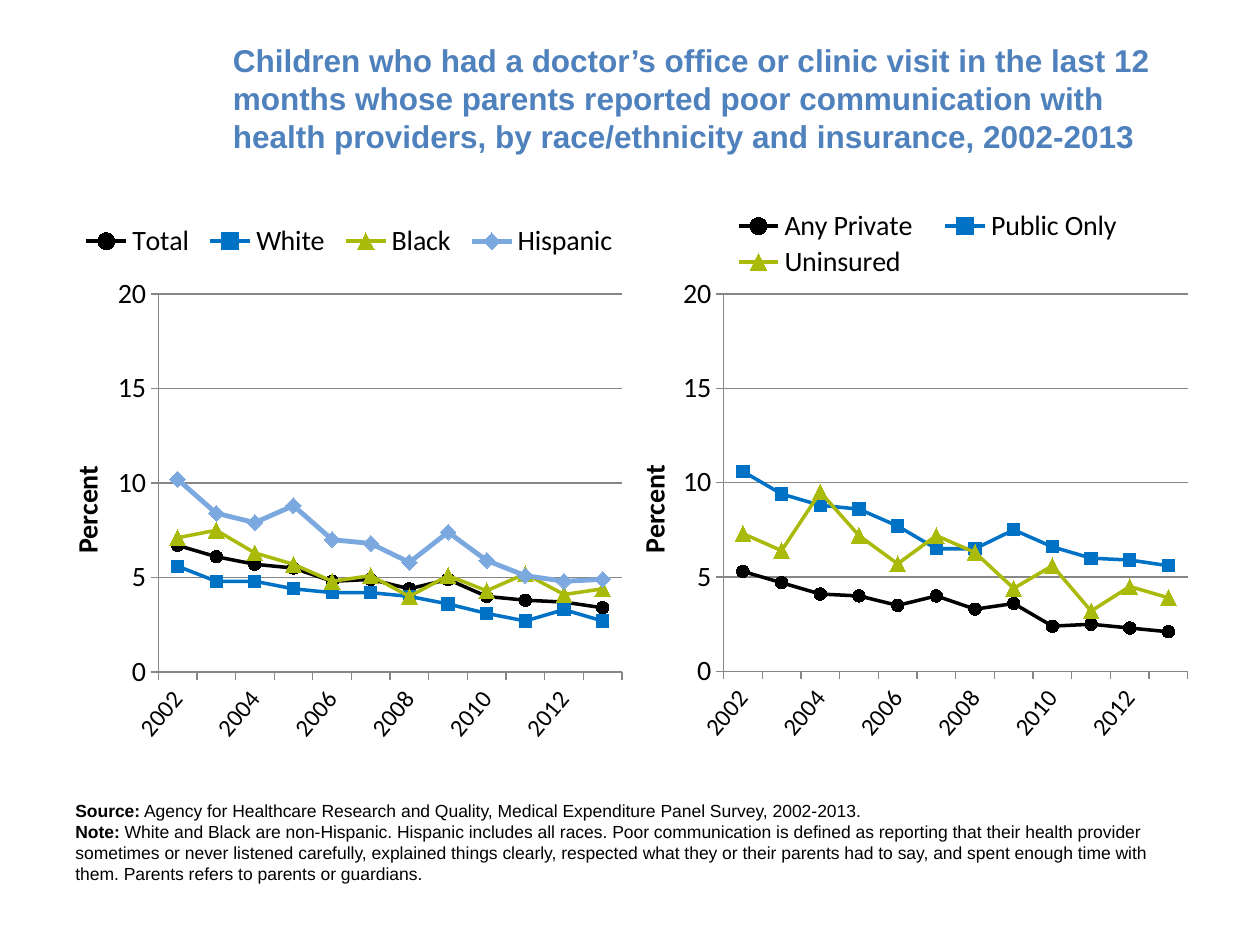
from pptx import Presentation
from pptx.chart.data import CategoryChartData as Data
from pptx.dml.color import RGBColor
from pptx.enum.chart import XL_CHART_TYPE as Kind, XL_LEGEND_POSITION as Side
from pptx.enum.chart import XL_MARKER_STYLE as Mark, XL_TICK_MARK as Tick
from pptx.enum.text import MSO_ANCHOR as Anchor
from pptx.oxml.ns import qn
from pptx.util import Pt
from lxml.etree import SubElement, Element

BLACK = RGBColor(0x00, 0x00, 0x00)
BLUE = RGBColor(0x00, 0x72, 0xC6)
GREEN = RGBColor(0xAA, 0xBA, 0x0A)
SKY = RGBColor(0x7B, 0xA8, 0xDF)
GRAY = RGBColor(0x86, 0x86, 0x86)
TITLE = RGBColor(0x4F, 0x81, 0xBD)

YEARS = [str(year) for year in range(2002, 2014)]
STYLES = [
    (BLACK, Mark.CIRCLE, 7, 2),
    (BLUE, Mark.SQUARE, 7, 2),
    (GREEN, Mark.TRIANGLE, 9, 2),
    (SKY, Mark.DIAMOND, 9, 2.75),
]
RACE = {
    "Total": [6.7, 6.1, 5.7, 5.5, 4.8, 4.9, 4.4, 4.9, 4, 3.8, 3.7, 3.4],
    "White": [5.6, 4.8, 4.8, 4.4, 4.2, 4.2, 4, 3.6, 3.1, 2.7, 3.3, 2.7],
    "Black": [7.1, 7.5, 6.3, 5.7, 4.8, 5.1, 4, 5.1, 4.3, 5.2, 4.1, 4.4],
    "Hispanic": [10.2, 8.4, 7.9, 8.8, 7, 6.8, 5.8, 7.4, 5.9, 5.1, 4.8, 4.9],
}
PLAN = {
    "Any Private": [5.3, 4.7, 4.1, 4, 3.5, 4, 3.3, 3.6, 2.4, 2.5, 2.3, 2.1],
    "Public Only": [10.6, 9.4, 8.8, 8.6, 7.7, 6.5, 6.5, 7.5, 6.6, 6, 5.9, 5.6],
    "Uninsured": [7.3, 6.4, 9.5, 7.2, 5.7, 7.2, 6.3, 4.4, 5.6, 3.2, 4.5, 3.9],
}
HEAD = (
    "Children who had a doctor’s office or clinic visit in the last 12 months whose "
    "parents reported poor communication with health providers, by race/ethnicity "
    "and insurance, 2002-2013"
)
NOTES = [
    ("Source:", " Agency for Healthcare Research and Quality, Medical Expenditure "
     "Panel Survey, 2002-2013."),
    ("Note:", " White and Black are non-Hispanic. Hispanic includes all races. Poor "
     "communication is defined as reporting that their health provider sometimes or "
     "never listened carefully, explained things clearly, respected what they or their "
     "parents had to say, and spent enough time with them. Parents refers to parents "
     "or guardians."),
]


def set_font(font, size, name="Arial", color=BLACK, bold=False):
    """Give a font its size, face, colour and weight."""
    font.size, font.name, font.bold = Pt(size), name, bold
    font.color.rgb = color


def add_frame(slide, box):
    """Add a wrapping text box and return its text frame."""
    frame = slide.shapes.add_textbox(*map(Pt, box)).text_frame
    frame.word_wrap = True
    return frame


def add_title(slide, box):
    """Write the slide title, centred vertically in its box."""
    frame = add_frame(slide, box)
    frame.vertical_anchor = Anchor.MIDDLE
    frame.text = HEAD
    set_font(frame.paragraphs[0].runs[0].font, 18, color=TITLE, bold=True)


def add_notes(slide, box):
    """Write the source and note lines with bold lead words."""
    frame = add_frame(slide, box)
    for i, (lead, body) in enumerate(NOTES):
        para = frame.add_paragraph() if i else frame.paragraphs[0]
        for text, bold in ((lead, True), (body, False)):
            run = para.add_run()
            run.text = text
            set_font(run.font, 10, bold=bold)


def pin(parent, index, box, inner=False):
    """Fix a chart part at the given fractions of the chart area."""
    for old in parent.findall(qn("c:layout")):
        parent.remove(old)
    layout = Element(qn("c:layout"))
    manual = SubElement(layout, qn("c:manualLayout"))
    parts = [("layoutTarget", "inner")] if inner else []
    parts += [("xMode", "edge"), ("yMode", "edge"), *zip("xywh", box)]
    for tag, val in parts:
        SubElement(manual, qn(f"c:{tag}")).set("val", str(val))
    parent.insert(index, layout)


def style_axes(chart):
    """Style the year axis and the percent axis."""
    years, rates = chart.category_axis, chart.value_axis
    for axis, size in ((years, 14), (rates, 16)):
        axis.major_tick_mark, axis.minor_tick_mark = Tick.OUTSIDE, Tick.NONE
        set_font(axis.tick_labels.font, size, "Calibri")
        axis.format.line.color.rgb = GRAY
        axis.format.line.width = Pt(0.75)
    root = years.tick_labels.font and years._element
    root.find(qn("c:txPr")).find(qn("a:bodyPr")).set("rot", "-3000000")
    skip = Element(qn("c:tickLblSkip"))
    skip.set("val", "2")
    root.find(qn("c:noMultiLvlLbl")).addprevious(skip)

    rates.minimum_scale, rates.maximum_scale, rates.major_unit = 0, 20, 5
    rates.tick_labels.number_format = "0"
    rates.tick_labels.number_format_is_linked = False
    grid = rates.major_gridlines.format.line
    grid.color.rgb, grid.width = GRAY, Pt(0.75)
    label = rates.axis_title.text_frame
    label.text = "Percent"
    set_font(label.paragraphs[0].runs[0].font, 16, "Calibri", bold=True)


def add_lines(slide, box, rows, plot, key):
    """Add a line chart with markers and a legend above its plot."""
    data = Data(number_format="0.0")
    data.categories = YEARS
    for name, vals in rows.items():
        data.add_series(name, vals)
    chart = slide.shapes.add_chart(Kind.LINE_MARKERS, *map(Pt, box), data).chart
    set_font(chart.font, 10)
    chart.has_title = False
    chart.plots[0].vary_by_categories = False
    for line, (color, mark, size, width) in zip(chart.plots[0].series, STYLES):
        line.smooth = False
        line.format.line.color.rgb, line.format.line.width = color, Pt(width)
        line.marker.style, line.marker.size = mark, size
        line.marker.format.fill.solid()
        line.marker.format.fill.fore_color.rgb = color
        line.marker.format.line.color.rgb = color
    style_axes(chart)

    chart.has_legend = True
    legend = chart.legend
    legend.position, legend.include_in_layout = Side.TOP, False
    set_font(legend.font, 16, "Calibri")
    pin(legend._element, 1, key)
    pin(chart._chartSpace.chart.plotArea, 0, plot, inner=True)


def main():
    """Build the slide and save it."""
    deck = Presentation()
    deck.slide_width, deck.slide_height = Pt(720), Pt(540)
    slide = deck.slides.add_slide(deck.slide_layouts[6])
    side = 324
    add_lines(slide, (36 + side, 115.2, side, side), PLAN,
              (0.165, 0.163, 0.819, 0.666), (0.15, 0.01, 0.75, 0.13))
    add_lines(slide, (36, 115.2, side, side), RACE,
              (0.168, 0.163, 0.818, 0.667), (0.02, 0.03, 0.97, 0.08))
    add_title(slide, (126, 21.6, 540, 68.4))
    add_notes(slide, (36, 453.6, 648, 55.4))
    deck.save("out.pptx")


if __name__ == "__main__":
    main()
